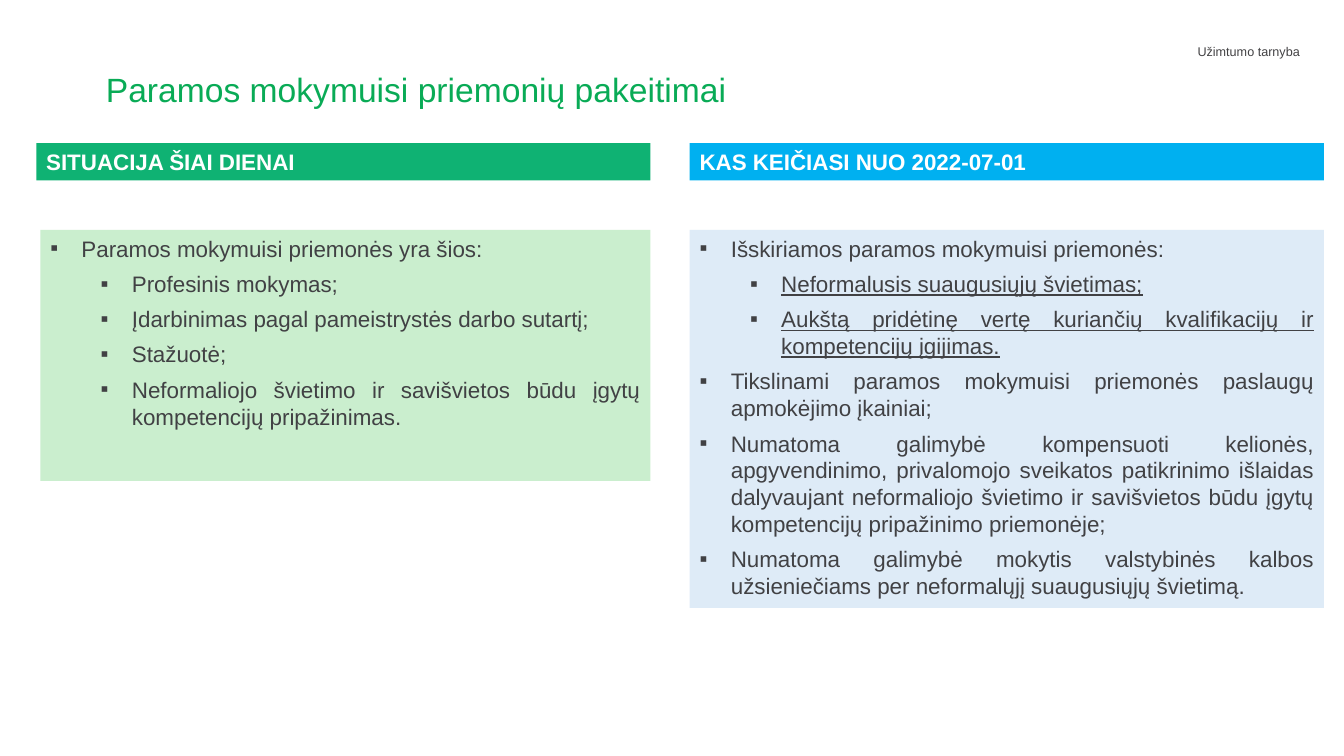
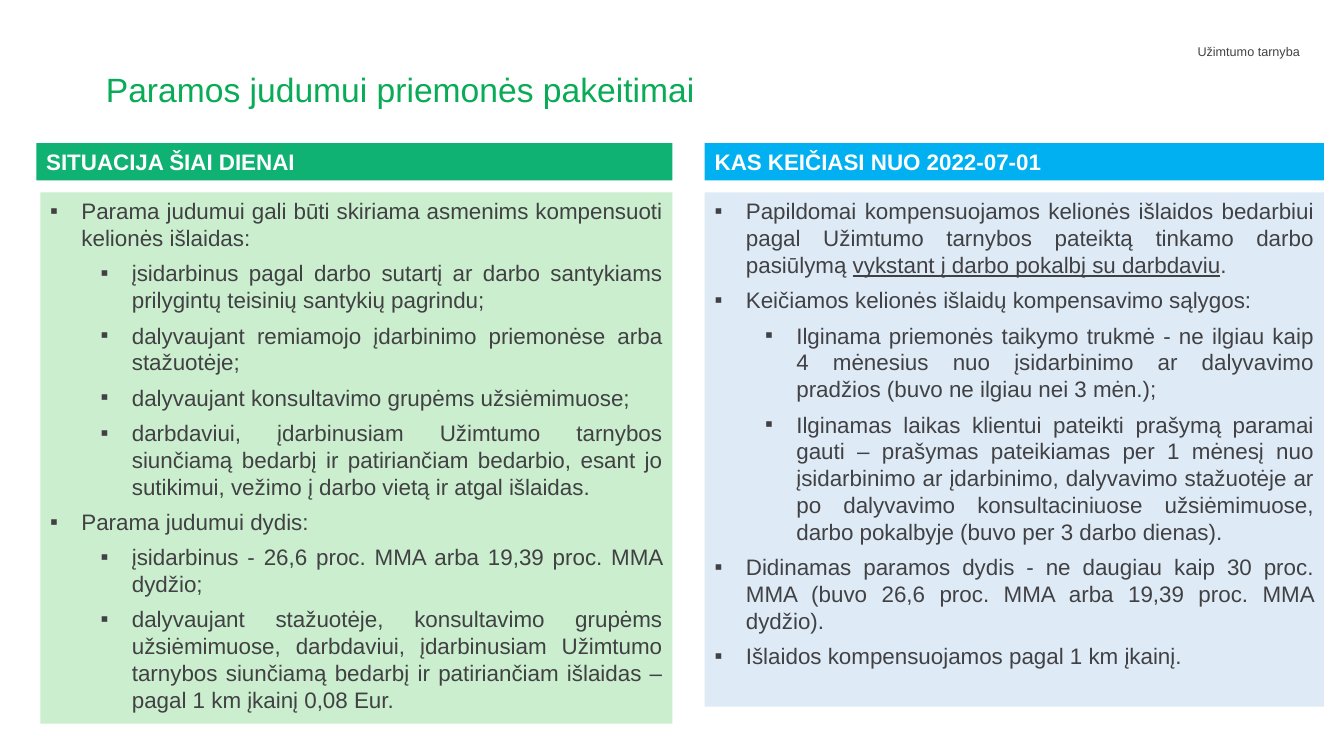
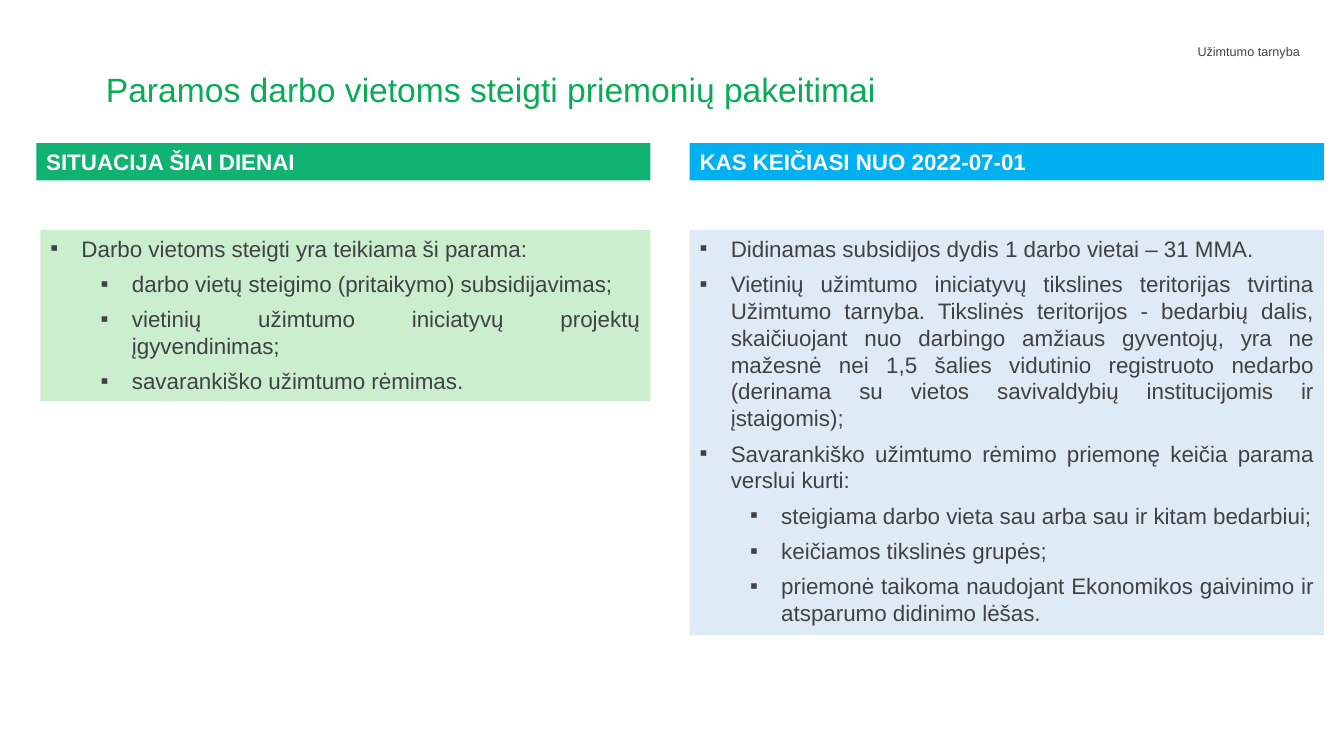
import pptx
import pptx.dml.color
import pptx.enum.shapes
import pptx.enum.text
import pptx.oxml.ns
import pptx.util
from lxml import etree

# Shared style
FONT = "Arial"
GREEN, BLUE = "0FB273", "00B0F0"
PALE_GREEN, PALE_BLUE = "CAEECE", "DEEBF7"
TITLE_GREEN, LABEL_GREY, BODY_GREY, WHITE = "09AB56", "434244", "414144", "FFFFFF"
ALIGN = pptx.enum.text.PP_ALIGN
ANCHOR = pptx.enum.text.MSO_ANCHOR

# Shared grid, in inches
PAGE_WIDTH, PAGE_HEIGHT = 13.33, 7.5
HEADER_LEFT, BODY_LEFT, RIGHT_EDGE = 0.36, 0.40, 13.13
HEADER_TOP, HEADER_HEIGHT = 1.42, 0.37
HANG, LEVEL_STEP = 0.31, 0.5

# Content: each item is (level, text); underscores enclose underlined words
NOW_HEADING = "SITUACIJA ŠIAI DIENAI"
NEW_HEADING = "KAS KEIČIASI NUO 2022-07-01"

PAGES = [
    dict(
        title="Paramos mokymuisi priemonių pakeitimai",
        gutter=(6.45, 6.84), body_top=2.28, heights=(2.49, 3.75),
        now=[
            (0, "Paramos mokymuisi priemonės yra šios:"),
            (1, "Profesinis mokymas;"),
            (1, "Įdarbinimas pagal pameistrystės darbo sutartį;"),
            (1, "Stažuotė;"),
            (1, "Neformaliojo švietimo ir savišvietos būdu įgytų kompetencijų pripažinimas."),
        ],
        new=[
            (0, "Išskiriamos paramos mokymuisi priemonės:"),
            (1, "_Neformalusis suaugusiųjų švietimas;_"),
            (1, "_Aukštą pridėtinę vertę kuriančių kvalifikacijų ir kompetencijų įgijimas._"),
            (0, "Tikslinami paramos mokymuisi priemonės paslaugų apmokėjimo įkainiai;"),
            (0, "Numatoma galimybė kompensuoti kelionės, apgyvendinimo, privalomojo sveikatos "
                "patikrinimo išlaidas dalyvaujant neformaliojo švietimo ir savišvietos būdu "
                "įgytų kompetencijų pripažinimo priemonėje;"),
            (0, "Numatoma galimybė mokytis valstybinės kalbos užsieniečiams per neformalųjį "
                "suaugusiųjų švietimą."),
        ],
    ),
    dict(
        title="Paramos judumui priemonės pakeitimai",
        gutter=(6.67, 6.99), body_top=1.91, heights=(5.27, 5.1),
        now=[
            (0, "Parama judumui gali būti skiriama asmenims kompensuoti kelionės išlaidas:"),
            (1, "įsidarbinus pagal darbo sutartį ar darbo santykiams prilygintų teisinių "
                "santykių pagrindu;"),
            (1, "dalyvaujant remiamojo įdarbinimo priemonėse arba stažuotėje;"),
            (1, "dalyvaujant konsultavimo grupėms užsiėmimuose;"),
            (1, "darbdaviui, įdarbinusiam Užimtumo tarnybos siunčiamą bedarbį ir patiriančiam "
                "bedarbio, esant jo sutikimui, vežimo į darbo vietą ir atgal išlaidas."),
            (0, "Parama judumui dydis:"),
            (1, "įsidarbinus - 26,6 proc. MMA arba 19,39 proc. MMA dydžio;"),
            (1, "dalyvaujant stažuotėje, konsultavimo grupėms užsiėmimuose, darbdaviui, "
                "įdarbinusiam Užimtumo tarnybos siunčiamą bedarbį ir patiriančiam išlaidas – "
                "pagal 1 km įkainį 0,08 Eur."),
        ],
        new=[
            (0, "Papildomai kompensuojamos kelionės išlaidos bedarbiui pagal Užimtumo tarnybos "
                "pateiktą tinkamo darbo pasiūlymą _vykstant į darbo pokalbį su darbdaviu_."),
            (0, "Keičiamos kelionės išlaidų kompensavimo sąlygos:"),
            (1, "Ilginama priemonės taikymo trukmė - ne ilgiau kaip 4 mėnesius nuo įsidarbinimo "
                "ar dalyvavimo pradžios (buvo ne ilgiau nei 3 mėn.);"),
            (1, "Ilginamas laikas klientui pateikti prašymą paramai gauti – prašymas pateikiamas "
                "per 1 mėnesį nuo įsidarbinimo ar įdarbinimo, dalyvavimo stažuotėje ar po "
                "dalyvavimo konsultaciniuose užsiėmimuose, darbo pokalbyje (buvo per 3 darbo "
                "dienas)."),
            (0, "Didinamas paramos dydis - ne daugiau kaip 30 proc. MMA (buvo 26,6 proc. MMA "
                "arba 19,39 proc. MMA dydžio)."),
            (0, "Išlaidos kompensuojamos pagal 1 km įkainį."),
        ],
    ),
    dict(
        title="Paramos darbo vietoms steigti priemonių pakeitimai",
        gutter=(6.45, 6.84), body_top=2.28, heights=(1.7, 4.02),
        now=[
            (0, "Darbo vietoms steigti yra teikiama ši parama:"),
            (1, "darbo vietų steigimo (pritaikymo) subsidijavimas;"),
            (1, "vietinių užimtumo iniciatyvų projektų įgyvendinimas;"),
            (1, "savarankiško užimtumo rėmimas."),
        ],
        new=[
            (0, "Didinamas subsidijos dydis 1 darbo vietai – 31 MMA."),
            (0, "Vietinių užimtumo iniciatyvų tikslines teritorijas tvirtina Užimtumo tarnyba. "
                "Tikslinės teritorijos - bedarbių dalis, skaičiuojant nuo darbingo amžiaus "
                "gyventojų, yra ne mažesnė nei 1,5 šalies vidutinio registruoto nedarbo "
                "(derinama su vietos savivaldybių institucijomis ir įstaigomis);"),
            (0, "Savarankiško užimtumo rėmimo priemonę keičia parama verslui kurti:"),
            (1, "steigiama darbo vieta sau arba sau ir kitam bedarbiui;"),
            (1, "keičiamos tikslinės grupės;"),
            (1, "priemonė taikoma naudojant Ekonomikos gaivinimo ir atsparumo didinimo lėšas."),
        ],
    ),
]


def color(hex_value):
    return pptx.dml.color.RGBColor.from_string(hex_value)


def inches(*lengths):
    return [pptx.util.Inches(length) for length in lengths]


def add_bullet(para, level):
    """Give a paragraph a square bullet with a hanging indent."""
    para.level = level
    properties = para._p.get_or_add_pPr()
    margin, hang = inches(HANG + level * LEVEL_STEP, HANG)
    properties.set("marL", str(margin))
    properties.set("indent", str(-hang))
    for tag, name, value in (("a:buFont", "typeface", FONT), ("a:buChar", "char", "▪")):
        etree.SubElement(properties, pptx.oxml.ns.qn(tag)).set(name, value)


def write(shape, items, size=16, ink=BODY_GREY, bold=False, align=ALIGN.LEFT,
          anchor=ANCHOR.TOP, after=0, spacing=None, bullets=False):
    """Fill a shape with (level, text) items in one format."""
    frame = shape.text_frame
    frame.word_wrap = True
    frame.auto_size = pptx.enum.text.MSO_AUTO_SIZE.NONE
    frame.vertical_anchor = anchor
    for index, (level, text) in enumerate(items):
        para = frame.add_paragraph() if index else frame.paragraphs[0]
        para.alignment = align
        para.space_before = pptx.util.Pt(0)
        para.space_after = pptx.util.Pt(after)
        if spacing:
            para.line_spacing = spacing
        if bullets:
            add_bullet(para, level)
        for part, words in enumerate(text.split("_")):
            if words:
                span = para.add_run()
                span.text = words
                span.font.name = FONT
                span.font.size = pptx.util.Pt(size)
                span.font.bold = bold
                span.font.underline = part % 2 == 1
                span.font.color.rgb = color(ink)


def add_panel(page, left, top, right, height, fill):
    box = page.shapes.add_shape(pptx.enum.shapes.MSO_SHAPE.RECTANGLE,
                                *inches(left, top, right - left, height))
    box.shadow.inherit = False
    box.fill.solid()
    box.fill.fore_color.rgb = color(fill)
    box.line.fill.background()
    return box


def add_column(page, heading, items, header_left, body_left, right,
               body_top, body_height, strong, pale):
    """Draw a heading band with its bulleted panel below."""
    band = add_panel(page, header_left, HEADER_TOP, right, HEADER_HEIGHT, strong)
    write(band, [(0, heading)], ink=WHITE, bold=True, anchor=ANCHOR.MIDDLE)
    panel = add_panel(page, body_left, body_top, right, body_height, pale)
    write(panel, items, align=ALIGN.JUSTIFY, after=6, bullets=True)


def set_title(page, text):
    title = page.shapes.title
    title.left, title.top, title.width, title.height = inches(0.95, 0.68, 11.44, 0.75)
    write(title, [(0, text)], size=24, ink=TITLE_GREEN, after=12, spacing=0.9)


def add_layout_label(layout, page):
    """Put the organisation label on the layout that all pages share."""
    label = page.shapes.add_textbox(*inches(8.49, 0.39, 4.5, 0.47))
    write(label, [(0, "Užimtumo tarnyba")], size=9, ink=LABEL_GREY, align=ALIGN.RIGHT)
    layout.shapes._spTree.append(label._element)


def add_page(deck, layout, title, gutter, body_top, heights, now, new):
    page = deck.slides.add_slide(layout)
    set_title(page, title)
    left_end, right_start = gutter
    add_column(page, NOW_HEADING, now, HEADER_LEFT, BODY_LEFT, left_end,
               body_top, heights[0], GREEN, PALE_GREEN)
    add_column(page, NEW_HEADING, new, right_start, right_start, RIGHT_EDGE,
               body_top, heights[1], BLUE, PALE_BLUE)
    return page


def main():
    deck = pptx.Presentation()
    deck.slide_width, deck.slide_height = inches(PAGE_WIDTH, PAGE_HEIGHT)
    layout = deck.slide_layouts.get_by_name("Title Only")
    pages = [add_page(deck, layout, **content) for content in PAGES]
    add_layout_label(layout, pages[0])
    deck.save("out.pptx")


if __name__ == "__main__":
    main()
